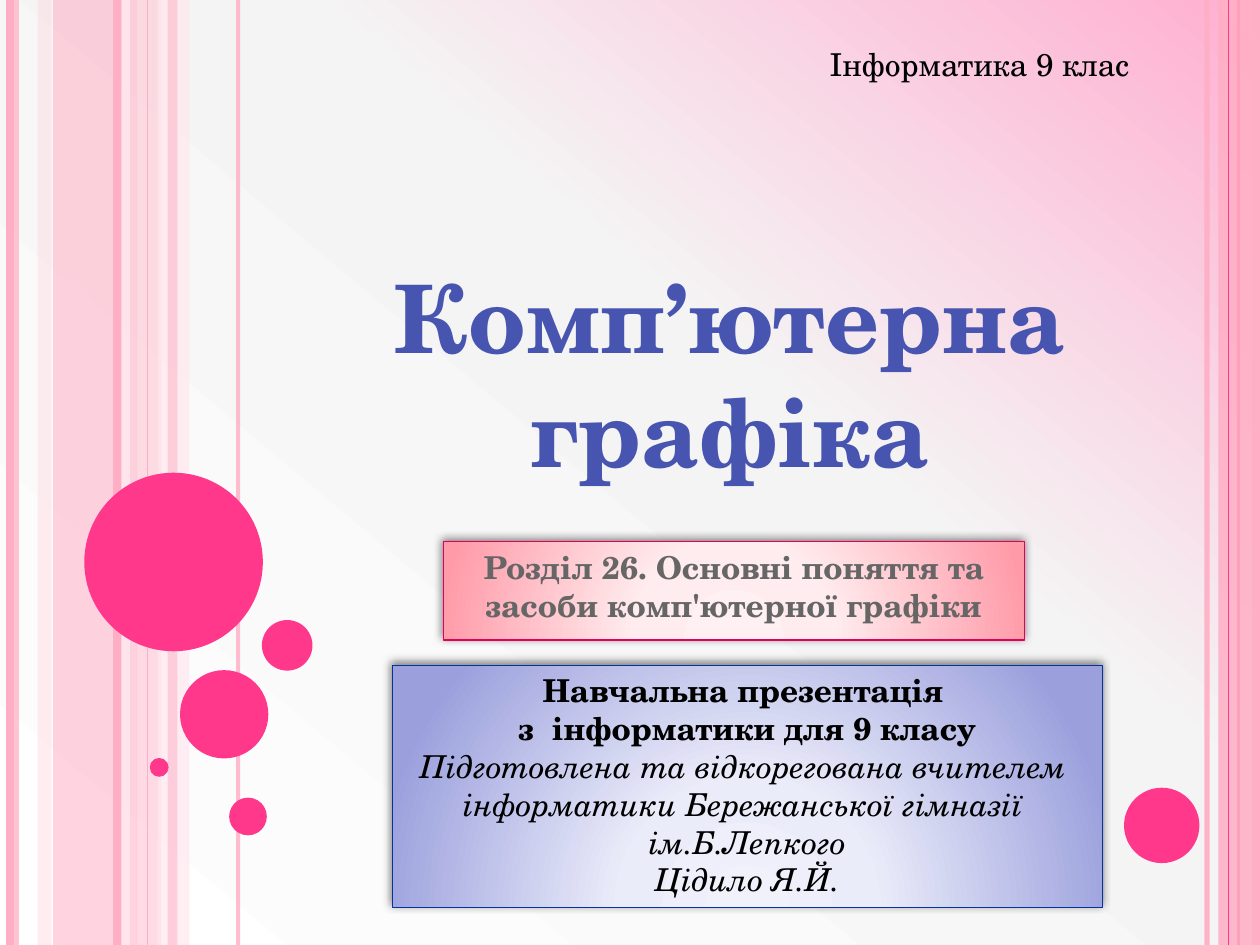
"""Builds the title slide of a computer graphics lesson."""
from lxml.etree import SubElement
from pptx import Presentation
from pptx.dml.color import RGBColor
from pptx.enum.shapes import MSO_CONNECTOR, MSO_SHAPE
from pptx.enum.text import MSO_ANCHOR, MSO_AUTO_SIZE, PP_ALIGN
from pptx.oxml import parse_xml
from pptx.oxml.ns import nsdecls, qn
from pptx.util import Cm, Pt

FONT = "TeX Gyre Schola"
PINK, ROSE, PALE, MIST = "FF388C", "FFAFC5", "FFCEDA", "FFE8EE"


def paint(fill, color, alpha=100):
    fill.solid()
    fill.fore_color.rgb = RGBColor.from_string(color)
    if alpha < 100:
        clr = fill._xPr.find(".//" + qn("a:srgbClr"))
        SubElement(clr, qn("a:alpha"), val=str(alpha * 1000))


def blend(fill, stops, direction):
    fill.gradient()
    old = fill._xPr.find(qn("a:gradFill"))
    gs = "".join(
        f'<a:gs pos="{pos * 1000}"><a:srgbClr val="{color}">'
        f'<a:alpha val="{alpha * 1000}"/></a:srgbClr></a:gs>'
        for pos, color, alpha in stops)
    new = parse_xml(f'<a:gradFill {nsdecls("a")} rotWithShape="1">'
                    f'<a:gsLst>{gs}</a:gsLst>{direction}</a:gradFill>')
    old.getparent().replace(old, new)


prs = Presentation()
prs.slide_width, prs.slide_height = Cm(25.4), Cm(19.05)
s = prs.slides.add_slide(prs.slide_layouts[0])
blend(s.background.fill,
      [(0, "FFAFD1", 83), (40, "F4F4F4", 100), (100, "FFFFFF", 100)],
      '<a:lin ang="7800000" scaled="0"/>')

stripes = [
    ("line", 24.33, 3, ROSE, 93), ("line", 0.2, 4.5, ROSE, 100),
    ("line", 24.97, 1.5, PINK, 100), ("band", 24.56, 0.84, ROSE, 87),
    ("line", 24.77, 0.75, PINK, 100), ("band", 1.07, 1.7, ROSE, 54),
    ("band", 0.76, 0.28, PALE, 36), ("band", 2.74, 0.51, PALE, 70),
    ("band", 3.18, 0.64, MIST, 71), ("line", 0.3, 4.5, ROSE, 73),
    ("line", 2.54, 4.5, MIST, 83), ("line", 2.36, 4.5, ROSE, 100),
    ("line", 4.8, 2.25, ROSE, 82), ("line", 2.97, 0.75, ROSE, 100),
    ("line", 25.32, 4.5, ROSE, 100), ("band", 3.38, 0.2, ROSE, 51),
]
for kind, x, width, color, alpha in stripes:
    if kind == "line":
        sp = s.shapes.add_connector(MSO_CONNECTOR.STRAIGHT, Cm(x), 0, Cm(x), prs.slide_height)
        sp.line.width = Pt(width)
        paint(sp.line.fill, color, alpha)
        SubElement(sp._element.spPr, qn("a:effectLst"))
    else:
        sp = s.shapes.add_shape(MSO_SHAPE.RECTANGLE, Cm(x), 0, Cm(width), prs.slide_height)
        sp.shadow.inherit = False
        sp.line.fill.background()
        paint(sp.fill, color, alpha)

circles = [(22.66, 15.88, 1.52), (1.7, 9.53, 3.6), (3.63, 13.51, 1.78),
           (3.02, 15.28, 0.38), (4.62, 16.08, 0.76), (5.28, 12.5, 1.02)]
for x, y, size in circles:
    sp = s.shapes.add_shape(MSO_SHAPE.OVAL, Cm(x), Cm(y), Cm(size), Cm(size))
    sp.shadow.inherit = False
    sp.line.fill.background()
    paint(sp.fill, PINK)

title, subtitle = s.placeholders
grade = s.shapes.add_textbox(0, 0, 0, 0)
author = s.shapes.add_shape(MSO_SHAPE.RECTANGLE, 0, 0, 0, 0)

panels = [
    (subtitle, "E40059", ("FFF1F3", "FFECEE", "FF9BA9")),
    (author, "00349E", ("F0F1FB", "EBECF9", "9BA0DD")),
]
for sp, edge, colors in panels:
    blend(sp.fill, [(pos, c, 100) for pos, c in zip((0, 34, 100), colors)],
          '<a:path path="circle"><a:fillToRect l="50000" t="155000" '
          'r="50000" b="-55000"/></a:path>')
    paint(sp.line.fill, edge)
    sp.line.width = Pt(0.75)
    sp.shadow.inherit = False
    sp._element.spPr.find(qn("a:effectLst")).append(parse_xml(
        f'<a:outerShdw {nsdecls("a")} blurRad="63500" dist="25400" dir="14700000" '
        'rotWithShape="0"><a:srgbClr val="000000"><a:alpha val="50000"/>'
        '</a:srgbClr></a:outerShdw>'))

heading = {"size": Pt(54), "bold": True}
gap = {"size": Pt(44), "bold": True, "italic": True}
plain = {"size": Pt(18), "bold": False}
bold = {"size": Pt(18), "bold": True}
italic = {"size": Pt(18), "bold": False, "italic": True}

texts = [
    (title, (6.15, 6.35, 18.64 - 1.5, 3.58), MSO_ANCHOR.BOTTOM, PP_ALIGN.CENTER, 0, "4855B0",
     [[("Комп’ютерна", heading), (" ", gap), ("графіка", heading)]]),
    (subtitle, (8.94, 10.92, 11.71, 1.98), MSO_ANCHOR.TOP, PP_ALIGN.CENTER, 6, "666666",
     [[("Розділ 26. Основні поняття та засоби комп'ютерної графіки", bold)]]),
    (grade, (15.88, 0.79, 7.14, 1.02), MSO_ANCHOR.TOP, PP_ALIGN.RIGHT, 0, "000000",
     [[("Інформатика 9 клас", plain)]]),
    (author, (7.92, 13.41, 14.3, 4.88), MSO_ANCHOR.TOP, PP_ALIGN.CENTER, 0, "000000",
     [[("Навчальна презентація ", bold)],
      [("з  інформатики для 9 класу", bold)],
      [("Підготовлена та відкорегована вчителем ", italic)],
      [("інформатики Бережанської гімназії  ім.Б.Лепкого", italic)],
      [("Цідило Я.Й.", italic)]]),
]
for sp, box, anchor, align, before, color, paragraphs in texts:
    for name, value in zip(("left", "top", "width", "height"), box):
        setattr(sp, name, Cm(value))
    tf = sp.text_frame
    tf.word_wrap = True
    tf.auto_size = MSO_AUTO_SIZE.NONE
    tf.vertical_anchor = anchor
    for i, runs in enumerate(paragraphs):
        p = tf.add_paragraph() if i else tf.paragraphs[0]
        p.alignment = align
        p.space_before = Pt(before)
        for text, style in runs:
            r = p.add_run()
            r.text = text
            r.font.name = FONT
            r.font.color.rgb = RGBColor.from_string(color)
            for name, value in style.items():
                setattr(r.font, name, value)

prs.save("out.pptx")
